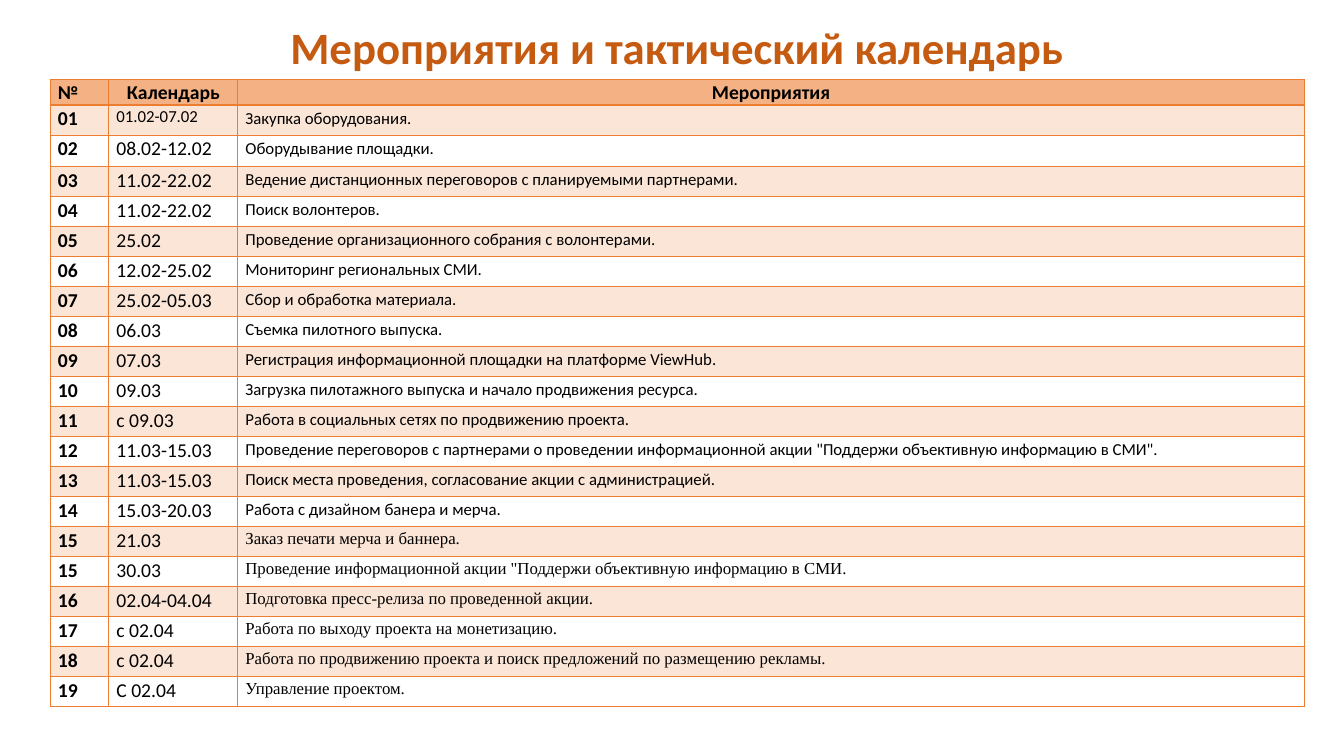
from typing import NamedTuple

from lxml import etree
from pptx import Presentation
from pptx.dml.color import RGBColor
from pptx.enum.text import MSO_AUTO_SIZE, PP_ALIGN
from pptx.oxml.ns import qn
from pptx.util import Pt

LEFT, CENTER = PP_ALIGN.LEFT, PP_ALIGN.CENTER
FIT = MSO_AUTO_SIZE.SHAPE_TO_FIT_TEXT
SANS, SERIF = "Calibri", "Times New Roman"
BLACK, RUST, ORANGE = "000000", "C55A11", "ED7D31"
PEACH, CREAM = "F4B183", "FBE5D6"
WIDTHS = (41.76, 92.16, 761.76)
HEAD_H, ROW_H, TALL_H = 18.3, 21.43, 22.6
TALL_ROW = 2


class Style(NamedTuple):
    size: float
    bold: bool = False
    font: str = SANS
    align: PP_ALIGN = LEFT
    line: float = 1.07
    after: float = 0


class Event(NamedTuple):
    num: str
    date: str
    task: str
    font: str = SANS
    size: float = 14


HEADS = ("№", "Календарь", "Мероприятия")
EVENTS = (
    Event("01", "01.02-07.02", "Закупка оборудования.", size=12),
    Event("02", "08.02-12.02", "Оборудывание площадки."),
    Event("03", "11.02-22.02", "Ведение дистанционных переговоров с планируемыми партнерами."),
    Event("04", "11.02-22.02", "Поиск волонтеров."),
    Event("05", "25.02", "Проведение организационного собрания с волонтерами."),
    Event("06", "12.02-25.02", "Мониторинг региональных СМИ."),
    Event("07", "25.02-05.03", "Сбор и обработка материала."),
    Event("08", "06.03", "Съемка пилотного выпуска."),
    Event("09", "07.03", "Регистрация информационной площадки на платформе ViewHub."),
    Event("10", "09.03", "Загрузка пилотажного выпуска и начало продвижения ресурса."),
    Event("11", "с 09.03", "Работа в социальных сетях по продвижению проекта."),
    Event("12", "11.03-15.03", "Проведение переговоров с партнерами о проведении информационной акции "
          '"Поддержи объективную информацию в СМИ".'),
    Event("13", "11.03-15.03", "Поиск места проведения, согласование акции с администрацией."),
    Event("14", "15.03-20.03", "Работа с дизайном банера и мерча."),
    Event("15", "21.03", "Заказ печати мерча и баннера.", SERIF),
    Event("15", "30.03", 'Проведение информационной акции "Поддержи объективную информацию в СМИ.', SERIF),
    Event("16", "02.04-04.04", "Подготовка пресс-релиза по проведенной акции.", SERIF),
    Event("17", "с 02.04", "Работа по выходу проекта на монетизацию.", SERIF),
    Event("18", "с 02.04", "Работа по продвижению проекта и поиск предложений по размещению рекламы.", SERIF),
    Event("19", "С 02.04", "Управление проектом.", SERIF),
)


def color(code: str) -> RGBColor:
    return RGBColor.from_string(code)


def write(frame, text: str, style: Style, tint: str = BLACK) -> None:
    frame.text = text
    para = frame.paragraphs[0]
    para.alignment = style.align
    para.line_spacing = style.line
    para.space_after = Pt(style.after)
    font = para.runs[0].font
    font.name, font.size, font.bold = style.font, Pt(style.size), style.bold
    font.color.rgb = color(tint)


def border(cell, top: float, bottom: float) -> None:
    props = cell._tc.get_or_add_tcPr()
    for side, width in (("L", 1), ("R", 1), ("T", top), ("B", bottom)):
        line = etree.SubElement(props, qn(f"a:ln{side}"), w=str(Pt(width)))
        fill = etree.SubElement(line, qn("a:solidFill"))
        etree.SubElement(fill, qn("a:srgbClr"), val=ORANGE)


def add_title(slide) -> None:
    box = slide.shapes.add_textbox(Pt(197.28), Pt(10.8), Pt(573.12), Pt(46.08))
    frame = box.text_frame
    frame.word_wrap = False
    frame.auto_size = FIT
    title = Style(32, bold=True, align=CENTER, line=1.0)
    write(frame, "Мероприятия и тактический календарь", title, RUST)


def row_styles(event: Event) -> tuple[Style, Style, Style]:
    after = 10 if event.font == SANS else 0
    task = Style(12, font=event.font, line=1.15, after=after)
    return Style(14, bold=True), Style(event.size), task


def add_plan(slide) -> None:
    """Draw the calendar table: a header row, then one row per event."""
    heights = [HEAD_H] + [ROW_H] * len(EVENTS)
    heights[TALL_ROW] = TALL_H
    table = slide.shapes.add_table(
        len(heights), len(WIDTHS), Pt(36), Pt(56.8), Pt(sum(WIDTHS)), Pt(sum(heights))
    ).table
    table.first_row = table.horz_banding = False
    for column, width in zip(table.columns, WIDTHS):
        column.width = Pt(width)
    head = Style(14, bold=True, align=CENTER)
    rows = [(HEADS, (head._replace(align=LEFT), head, head))]
    rows += [((e.num, e.date, e.task), row_styles(e)) for e in EVENTS]
    for i, (texts, styles) in enumerate(rows):
        table.rows[i].height = Pt(heights[i])
        for cell, text, style in zip(table.rows[i].cells, texts, styles):
            cell.margin_left = cell.margin_right = Pt(5.4)
            cell.margin_top = cell.margin_bottom = 0
            write(cell.text_frame, text, style)
            border(cell, top=2 if i == 1 else 1, bottom=2 if i == 0 else 1)
            if i and i % 2 == 0:
                cell.fill.background()
            else:
                cell.fill.solid()
                cell.fill.fore_color.rgb = color(CREAM if i else PEACH)


def main() -> None:
    deck = Presentation()
    deck.slide_width, deck.slide_height = Pt(960), Pt(540)
    slide = deck.slides.add_slide(deck.slide_layouts[6])
    add_title(slide)
    add_plan(slide)
    deck.save("out.pptx")


if __name__ == "__main__":
    main()
